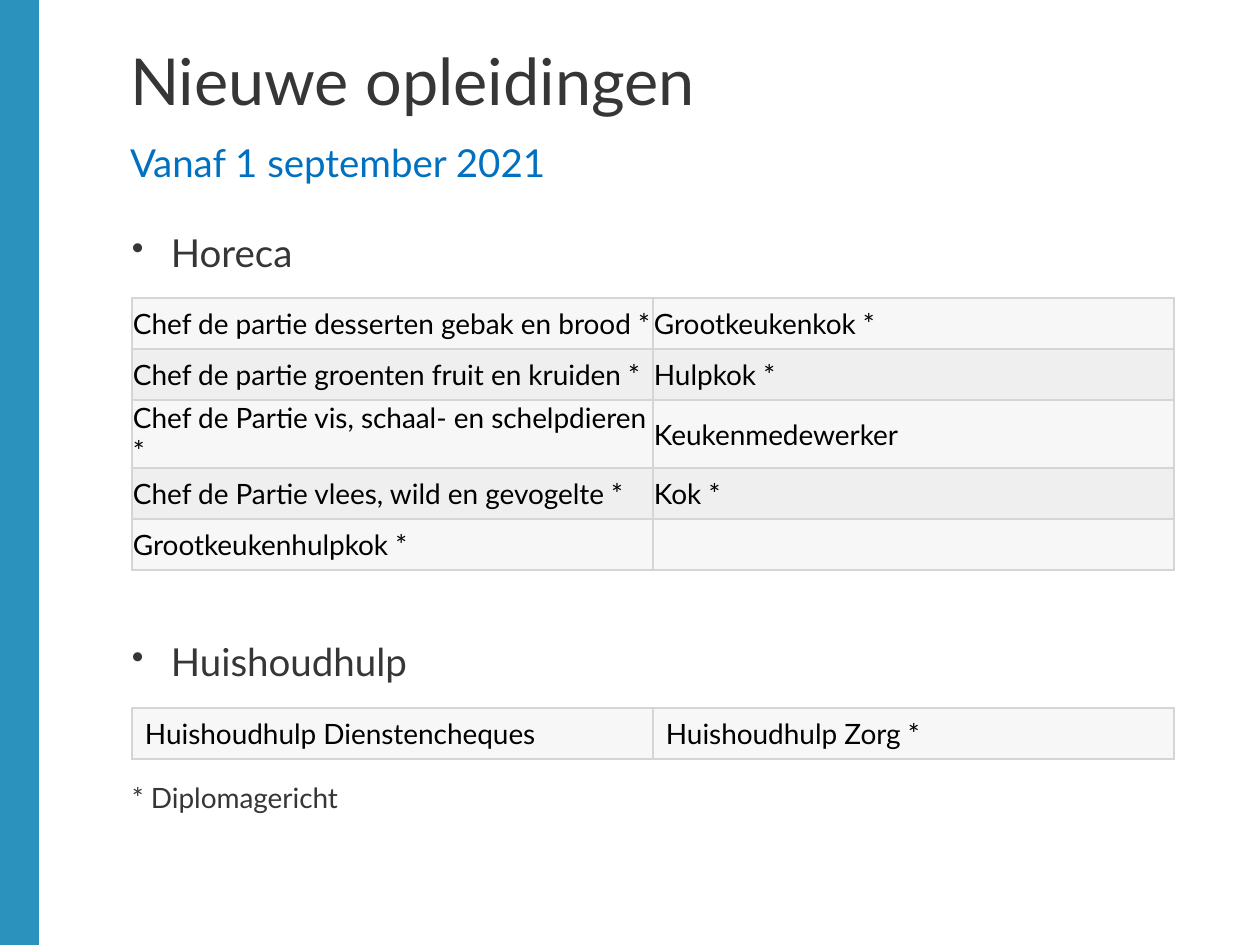
from lxml.etree import SubElement
from pptx import Presentation
from pptx.dml.color import RGBColor
from pptx.enum.shapes import MSO_SHAPE as Shape
from pptx.enum.text import MSO_ANCHOR as Anchor, MSO_AUTO_SIZE as AutoSize, PP_ALIGN as Align
from pptx.oxml.ns import qn
from pptx.util import Emu, Pt

# Content
TITLE = "Nieuwe opleidingen"
SUBTITLE = "Vanaf 1 september 2021"
HORECA = [
    ("Chef de partie desserten gebak en brood *", "Grootkeukenkok *"),
    ("Chef de partie groenten fruit en kruiden *", "Hulpkok *"),
    ("Chef de Partie vis, schaal- en schelpdieren *", "Keukenmedewerker"),
    ("Chef de Partie vlees, wild en gevogelte *", "Kok *"),
    ("Grootkeukenhulpkok *", ""),
]
HOUSEHOLD = [("Huishoudhulp Dienstencheques", "Huishoudhulp Zorg *")]
# heading, heading top, rows, table top, cell margins (left, top, right, bottom)
SECTIONS = [
    ("Horeca", 234, HORECA, 298, (1, 1, 1, 0)),
    ("Huishoudhulp", 643, HOUSEHOLD, 708, (13, 6, 13, 6)),
]
FOOTNOTE = "* Diplomagericht"

# Style, lengths in px
FONT = "Lato"
INK, BLUE, BAR, BORDER = "373636", "0070C0", "2B92BE", "D5D5D5"
BANDS = ("F7F7F7", "EFEFEF")
LEFT, TEXT_WIDTH, COLUMN, ROW, INDENT = 132, 1072, 521, 51, 39


def px(length):
    return Emu(length * 914400 // 126)


def rgb(value):
    return RGBColor.from_string(value)


def style(font, size, color):
    font.name, font.size, font.color.rgb = FONT, Pt(size), rgb(color)


def set_frame(frame, margins=(0, 0, 0, 0)):
    frame.word_wrap = True
    frame.auto_size = AutoSize.NONE
    frame.vertical_anchor = Anchor.TOP
    (frame.margin_left, frame.margin_top,
     frame.margin_right, frame.margin_bottom) = map(px, margins)


def add_text(page, text, top, size, bullet=False):
    box = page.shapes.add_textbox(px(LEFT), px(top), px(TEXT_WIDTH), px(50))
    set_frame(box.text_frame)
    para = box.text_frame.paragraphs[0]
    para.text = text
    para.line_spacing = 0.9
    if bullet:
        props = para._p.get_or_add_pPr()
        props.set("marL", str(px(INDENT)))
        props.set("indent", str(-px(INDENT)))
        SubElement(props, qn("a:buSzPct"), val="90000")
        SubElement(props, qn("a:buChar"), char="•")
    style(para.font, size, INK)


def add_borders(cell):
    props = cell._tc.get_or_add_tcPr()
    for side in ("lnL", "lnR", "lnT", "lnB"):
        line = SubElement(props, qn(f"a:{side}"), w=str(Pt(1)))
        SubElement(SubElement(line, qn("a:solidFill")), qn("a:srgbClr"), val=BORDER)


def add_grid(page, rows, top, margins):
    columns = len(rows[0])
    table = page.shapes.add_table(len(rows), columns, px(LEFT), px(top),
                                  px(columns * COLUMN), px(len(rows) * ROW)).table
    table.first_row = table.horz_banding = False
    for r, texts in enumerate(rows):
        for c, text in enumerate(texts):
            cell = table.cell(r, c)
            add_borders(cell)
            cell.fill.solid()
            cell.fill.fore_color.rgb = rgb(BANDS[r % 2])
            cell.vertical_anchor = Anchor.MIDDLE
            (cell.margin_left, cell.margin_top,
             cell.margin_right, cell.margin_bottom) = map(px, margins)
            cell.text = text
            style(cell.text_frame.paragraphs[0].font, 16, "000000")


deck = Presentation()
deck.slide_width, deck.slide_height = px(1260), px(945)
page = deck.slides.add_slide(deck.slide_layouts[5])

# Side bar
bar = page.shapes.add_shape(Shape.RECTANGLE, 0, 0, px(39), px(945))
bar.shadow.inherit = False
bar.fill.solid()
bar.fill.fore_color.rgb = bar.line.color.rgb = rgb(BAR)
bar.line.width = Pt(0.5)

# Title with the start date on its second line
title = page.shapes.title
title.left, title.top, title.width, title.height = map(px, (130, 52, 1074, 154))
set_frame(title.text_frame)
para = title.text_frame.paragraphs[0]
para.alignment = Align.LEFT
para.line_spacing = Pt(38)
for text, size, color in ((TITLE, 37, INK), (SUBTITLE, 22, BLUE)):
    if para.runs:
        para.add_line_break()
    span = para.add_run()
    span.text = text
    style(span.font, size, color)

# Sections and footnote
for heading, heading_top, rows, table_top, margins in SECTIONS:
    add_text(page, heading, heading_top, 22, bullet=True)
    add_grid(page, rows, table_top, margins)
add_text(page, FOOTNOTE, 784, 16)

deck.save("out.pptx")
